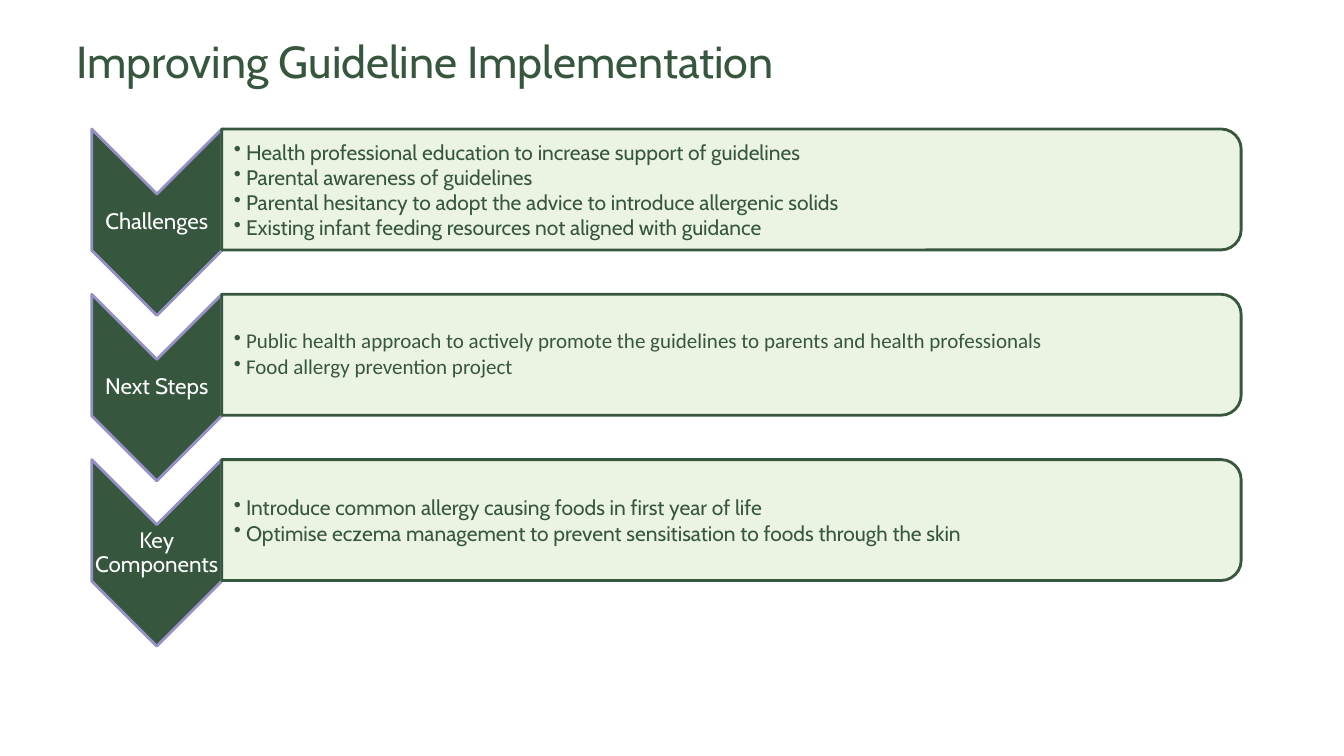
from lxml.etree import SubElement as Sub
from pptx import Presentation
from pptx.dml.color import RGBColor as RGB
from pptx.enum.shapes import MSO_SHAPE as Shape
from pptx.enum.text import MSO_ANCHOR as Anchor, PP_ALIGN as Align
from pptx.oxml.ns import qn
from pptx.util import Inches, Pt

HUES = {"green": "36573D", "pale": "E9F2DF", "lilac": "9591C7", "white": "FFFFFF"}

deck = Presentation()
deck.slide_width, deck.slide_height = Inches(13.33), Inches(7.5)
slide = deck.slides.add_slide(deck.slide_layouts[6])

# Grid: one narrow column of arrows, one wide column of panels, three rows
LEFT, TOP = 0.91, 1.28
COL, WIDE = 1.29, 10.11
ROW, PANEL, ARROW = 1.64, 1.2, 1.85
LABEL = 0.55


def write(text, x, y, w, h, size=15, font="Cabin", hue="green", align=Align.LEFT,
          anchor=Anchor.MIDDLE, pad=(0.01, 0.01), line=1.0, after=0, dot=False):
    frame = slide.shapes.add_textbox(Inches(x), Inches(y), Inches(w), Inches(h)).text_frame
    frame.word_wrap = True
    frame.vertical_anchor = anchor
    frame.margin_left, frame.margin_right = Inches(pad[0]), Inches(0.01)
    frame.margin_top = frame.margin_bottom = Inches(pad[1])
    frame.text = text
    for para in frame.paragraphs:
        para.alignment, para.line_spacing, para.space_after = align, line, Pt(after)
        if dot:
            props = para._p.get_or_add_pPr()
            props.set("marL", str(Inches(0.12)))
            props.set("indent", str(-Inches(0.12)))
            Sub(props, qn("a:buChar"), char="•")
        para.font.size, para.font.name = Pt(size), font
        para.font.color.rgb = RGB.from_string(HUES[hue])


def turn(kind, x, y, w, h, fill, edge):
    """Draw a shape turned a quarter so that it fills the given box."""
    form = slide.shapes.add_shape(kind, Inches(x + (w - h) / 2), Inches(y + (h - w) / 2),
                                  Inches(h), Inches(w))
    form.rotation = 90
    form.shadow.inherit = False
    form.fill.solid()
    form.fill.fore_color.rgb = RGB.from_string(HUES[fill])
    form.line.color.rgb = RGB.from_string(HUES[edge])
    form.line.width = Pt(2)
    return form


# Title
write("Improving Guideline Implementation", 0.66, 0.35, 11.76, 0.93, size=32,
      anchor=Anchor.TOP, pad=(0.1, 0.05), line=0.9)

# Rows: label, points, format of the points
ROWS = [
    ("Challenges", [
        "Health professional education to increase support of guidelines",
        "Parental awareness of guidelines",
        "Parental hesitancy to adopt the advice to introduce allergenic solids",
        "Existing infant feeding resources not aligned with guidance"], {}),
    ("Next Steps", [
        "Public health approach to actively promote the guidelines to parents "
        "and health professionals",
        "Food allergy prevention project"], dict(font="Calibri", line=0.9, after=2.25)),
    ("Key Components", [
        "Introduce common allergy causing foods in first year of life",
        "Optimise eczema management to prevent sensitisation to foods through the skin"], {}),
]

for i, (label, points, style) in enumerate(ROWS):
    y = TOP + i * ROW

    # Arrow with its label
    turn(Shape.CHEVRON, LEFT, y, COL, ARROW, "green", "lilac")
    write(label, LEFT, y + (ARROW - LABEL) / 2, COL, LABEL, size=16, hue="white",
          align=Align.CENTER, line=0.9, after=5.6)

    # Panel with its points
    panel = turn(Shape.ROUND_2_SAME_RECTANGLE, LEFT + COL, y, WIDE, PANEL, "pale", "green")
    tint = panel.fill._xPr.find(qn("a:solidFill"))[0]
    Sub(tint, qn("a:alpha"), val="90000")
    write("\n".join(points), LEFT + COL, y, WIDE, PANEL, pad=(0.12, 0.01), dot=True, **style)

deck.save("out.pptx")
